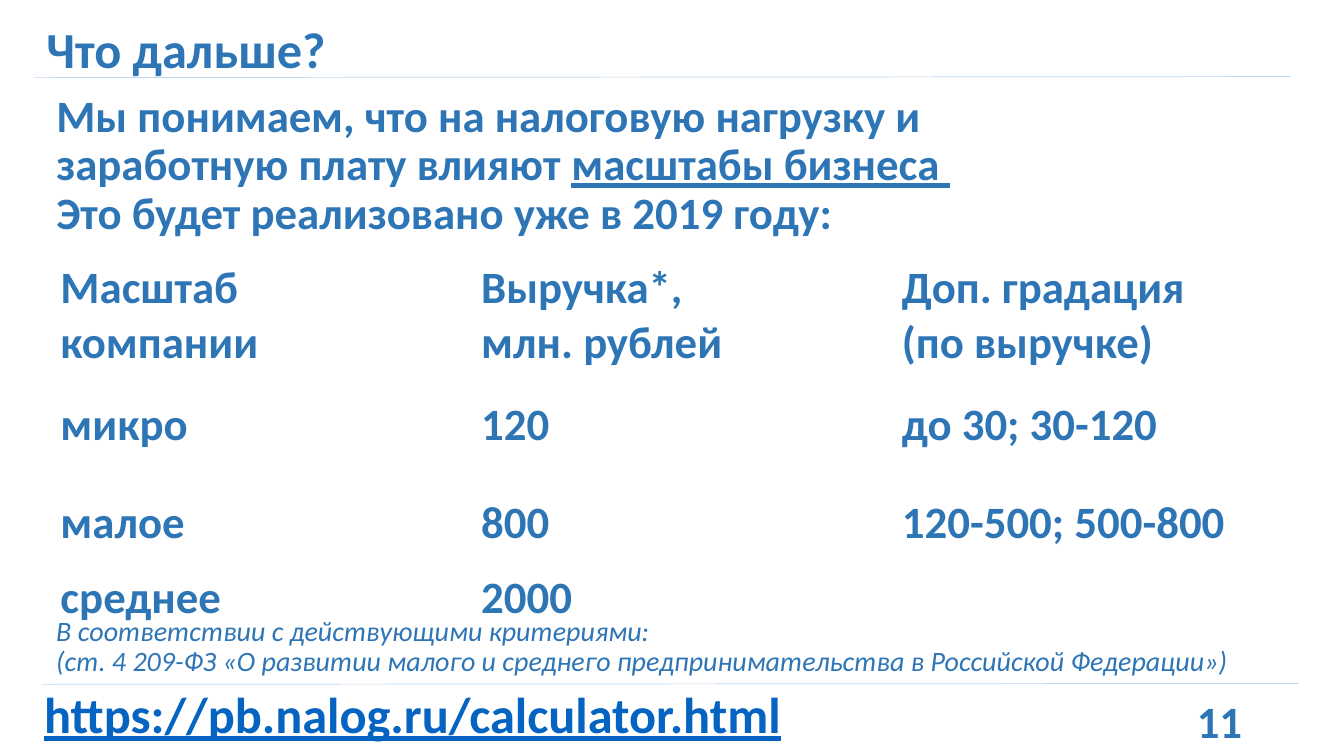
from dataclasses import dataclass

from lxml.etree import SubElement
from pptx import Presentation
from pptx.dml.color import RGBColor
from pptx.enum.shapes import MSO_CONNECTOR
from pptx.enum.text import MSO_ANCHOR, PP_ALIGN
from pptx.oxml.ns import qn
from pptx.slide import Slide
from pptx.text.text import TextFrame
from pptx.util import Emu, Inches, Pt

SLIDE_WIDTH, SLIDE_HEIGHT = Inches(13.33), Inches(7.5)
NO_STYLE_NO_GRID = "{2D5ABB26-0587-4C30-8999-92F81FD0307C}"


@dataclass(frozen=True)
class Theme:
    font: str = "Calibri"
    text: str = "2E75B6"
    link: str = "0563C1"
    rule: str = "BDD7EE"
    large: int = 36
    body: int = 32
    note: int = 20
    rule_width: float = 0.5


THEME = Theme()


@dataclass(frozen=True)
class Area:
    """A rectangle in percent of the slide's width and height."""
    left: float
    top: float
    width: float
    height: float

    def lengths(self) -> tuple[Emu, Emu, Emu, Emu]:
        return across(self.left), down(self.top), across(self.width), down(self.height)


@dataclass(frozen=True)
class Span:
    text: str
    underline: bool = False


@dataclass(frozen=True)
class TextBlock:
    area: Area
    paragraphs: list[list[Span]]
    size: int = THEME.body
    color: str = THEME.text
    bold: bool = True
    italic: bool = False
    anchor: MSO_ANCHOR = MSO_ANCHOR.BOTTOM
    align: PP_ALIGN = PP_ALIGN.LEFT
    spacing: float = 0.9


@dataclass(frozen=True)
class Rule:
    left: float
    start: float
    right: float
    end: float


def across(share: float) -> Emu:
    return Emu(round(SLIDE_WIDTH * share / 100))


def down(share: float) -> Emu:
    return Emu(round(SLIDE_HEIGHT * share / 100))


def write(frame: TextFrame, paragraphs: list[list[Span]], *, size: int = THEME.body,
          color: str = THEME.text, bold: bool = True, italic: bool = False,
          align: PP_ALIGN = PP_ALIGN.LEFT, spacing: float = 1.0) -> None:
    for index, spans in enumerate(paragraphs):
        para = frame.add_paragraph() if index else frame.paragraphs[0]
        para.alignment = align
        para.line_spacing = spacing
        for span in spans:
            run = para.add_run()
            run.text = span.text
            font = run.font
            font.name, font.size = THEME.font, Pt(size)
            font.bold, font.italic, font.underline = bold, italic, span.underline
            font.color.rgb = RGBColor.from_string(color)


def add_title(page: Slide, text: str, area: Area) -> None:
    title = page.shapes.title
    title.left, title.top, title.width, title.height = area.lengths()
    title.text_frame.vertical_anchor = MSO_ANCHOR.MIDDLE
    write(title.text_frame, [[Span(text)]], size=THEME.large)


def add_text(page: Slide, block: TextBlock) -> None:
    frame = page.shapes.add_textbox(*block.area.lengths()).text_frame
    frame.word_wrap = True
    frame.vertical_anchor = block.anchor
    write(frame, block.paragraphs, size=block.size, color=block.color, bold=block.bold,
          italic=block.italic, align=block.align, spacing=block.spacing)


def add_rule(page: Slide, rule: Rule) -> None:
    line = page.shapes.add_connector(
        MSO_CONNECTOR.STRAIGHT, across(rule.left), down(rule.start),
        across(rule.right), down(rule.end))
    line.line.color.rgb = RGBColor.from_string(THEME.rule)
    line.line.width = Pt(THEME.rule_width)
    SubElement(line._element.spPr, qn("a:effectLst"))


def add_grid(page: Slide, rows: list[list[str]], area: Area, heights: list[float]) -> None:
    table = page.shapes.add_table(len(rows), len(rows[0]), *area.lengths()).table
    table.first_row = table.horz_banding = False
    # A style without borders keeps the note under the last row clear
    table._tbl.tblPr.find(qn("a:tableStyleId")).text = NO_STYLE_NO_GRID
    for row, height, texts in zip(table.rows, heights, rows):
        row.height = down(height)
        for cell, text in zip(row.cells, texts):
            cell.fill.background()
            if text:
                write(cell.text_frame, [[Span(part)] for part in text.split("\n")])


RULES = [Rule(2.55, 10.27, 96.02, 10.13), Rule(3.08, 90.53, 96.62, 90.4)]

BLOCKS = [
    # Introduction
    TextBlock(Area(3.45, 17.6, 82.3, 14.67), [
        [Span("Мы понимаем, что на налоговую нагрузку и заработную плату влияют "),
         Span("масштабы бизнеса ", underline=True)],
        [Span("Это будет реализовано уже в 2019 году:")]]),
    # Calculator address
    TextBlock(Area(2.55, 81.6, 82.6, 17.47),
              [[Span("https://pb.nalog.ru/calculator.html", underline=True)]],
              size=THEME.large, color=THEME.link),
    # Page number
    TextBlock(Area(70.67, 92.67, 22.5, 5.33), [[Span("11")]],
              anchor=MSO_ANCHOR.MIDDLE, align=PP_ALIGN.RIGHT, spacing=1.0),
    # Note on the criteria
    TextBlock(Area(3.45, 81.6, 93.17, 8.67), [
        [Span("В соответствии с действующими критериями:")],
        [Span("(ст. 4 209-ФЗ «О развитии малого и среднего предпринимательства "
              "в Российской Федерации»)")]],
        size=THEME.note, bold=False, italic=True),
]

COMPANY_SCALES = [
    ["Масштаб\nкомпании", "Выручка*,\nмлн. рублей", "Доп. градация\n(по выручке)"],
    ["микро", "120", "до 30; 30-120"],
    ["малое", "800", "120-500; 500-800"],
    ["среднее", "2000", ""],
]
ROW_HEIGHTS = [18.13, 12.93, 9.87, 9.87]


def main() -> None:
    deck = Presentation()
    deck.slide_width, deck.slide_height = SLIDE_WIDTH, SLIDE_HEIGHT
    page = deck.slides.add_slide(deck.slide_layouts.get_by_name("Title Only"))

    add_title(page, "Что дальше?", Area(2.7, -2.93, 96.62, 18.67))
    for rule in RULES:
        add_rule(page, rule)
    # The table lies behind the text, as its last row reaches into the note
    add_grid(page, COMPANY_SCALES, Area(3.75, 33.87, 93.92, sum(ROW_HEIGHTS)), ROW_HEIGHTS)
    for block in BLOCKS:
        add_text(page, block)

    deck.save("out.pptx")


if __name__ == "__main__":
    main()
